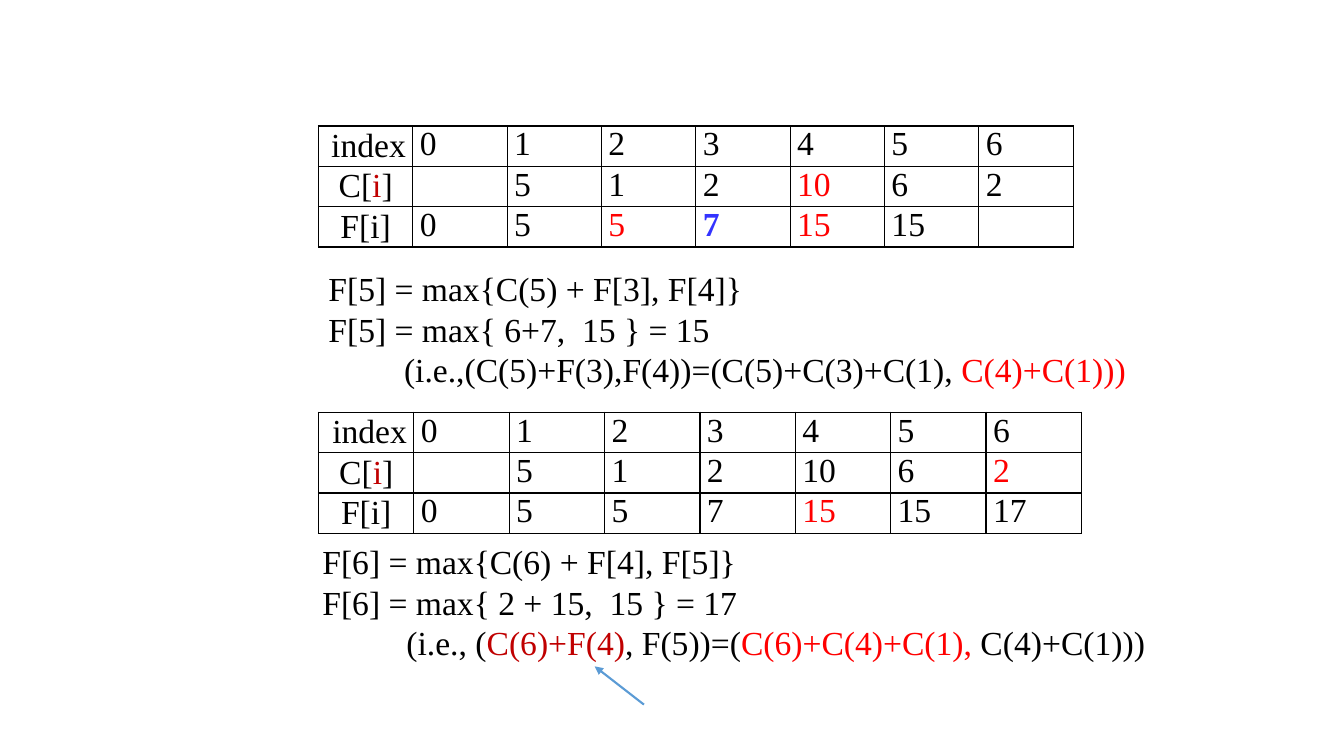
from lxml.etree import SubElement
from pptx import Presentation
from pptx.dml.color import RGBColor
from pptx.enum.shapes import MSO_CONNECTOR
from pptx.enum.text import MSO_ANCHOR as Anchor, PP_ALIGN as Align
from pptx.oxml.ns import qn
from pptx.util import Pt

BLACK = RGBColor(0x00, 0x00, 0x00)
WHITE = RGBColor(0xFF, 0xFF, 0xFF)
RED = RGBColor(0xFF, 0x00, 0x00)
DARK_RED = RGBColor(0xC0, 0x00, 0x00)
BLUE = RGBColor(0x33, 0x33, 0xFF)
ARROW_BLUE = RGBColor(0x5B, 0x9B, 0xD5)


def styled(text, **style):
    """Pair a piece of text with its format: color, bold."""
    return text, style


class SlideBuilder:
    font = "Times New Roman"
    size = Pt(24)
    row_height = Pt(28.8)

    def __init__(self, slide):
        self.slide = slide

    def add_pieces(self, paragraph, *pieces):
        for piece in pieces:
            text, style = styled(piece) if isinstance(piece, str) else piece
            run = paragraph.add_run()
            run.text = text
            run.font.name = self.font
            run.font.size = self.size
            run.font.bold = style.get("bold", False)
            run.font.color.rgb = style.get("color", BLACK)

    def text(self, left, top, width, height, lines):
        """Each line is a left indent in points followed by its pieces."""
        box = self.slide.shapes.add_textbox(Pt(left), Pt(top), Pt(width), Pt(height))
        frame = box.text_frame
        frame.word_wrap = True
        for number, (indent, *pieces) in enumerate(lines):
            paragraph = frame.add_paragraph() if number else frame.paragraphs[0]
            paragraph._p.get_or_add_pPr().set("marL", str(Pt(indent)))
            self.add_pieces(paragraph, *pieces)

    def border(self, cell):
        properties = cell._tc.get_or_add_tcPr()
        for position, side in enumerate(("lnL", "lnR", "lnT", "lnB")):
            line = SubElement(properties, qn(f"a:{side}"), w=str(Pt(1)))
            fill = SubElement(line, qn("a:solidFill"))
            SubElement(fill, qn("a:srgbClr"), val=str(BLACK))
            properties.insert(position, line)

    def table(self, left, top, column_width, rows):
        columns = len(rows[0])
        grid = self.slide.shapes.add_table(
            len(rows), columns, Pt(left), Pt(top),
            Pt(column_width * columns), self.row_height * len(rows)).table
        for column in grid.columns:
            column.width = Pt(column_width)
        for r, row in enumerate(rows):
            grid.rows[r].height = self.row_height
            for c, pieces in enumerate(row):
                cell = grid.cell(r, c)
                cell.fill.solid()
                cell.fill.fore_color.rgb = WHITE
                cell.margin_left = cell.margin_right = Pt(5)
                cell.margin_top = cell.margin_bottom = 0
                paragraph = cell.text_frame.paragraphs[0]
                if c == 0:
                    cell.vertical_anchor = Anchor.MIDDLE
                    paragraph.alignment = Align.CENTER if r else Align.RIGHT
                self.add_pieces(paragraph, *(pieces if isinstance(pieces, list) else [pieces]))
                self.border(cell)

    def arrow(self, start, end):
        connector = self.slide.shapes.add_connector(
            MSO_CONNECTOR.STRAIGHT, *(Pt(value) for value in start + end))
        connector.line.color.rgb = ARROW_BLUE
        connector.line.width = Pt(1.5)
        properties = connector._element.spPr
        SubElement(properties.find(qn("a:ln")), qn("a:tailEnd"), type="triangle")
        SubElement(properties, qn("a:effectLst"))


def main():
    deck = Presentation()
    deck.slide_width, deck.slide_height = Pt(960), Pt(540)
    builder = SlideBuilder(deck.slides.add_slide(deck.slide_layouts[6]))

    index_row = ["index", *"0123456"]
    c_label = ["C[", styled("i", color=DARK_RED), "]"]
    red_15 = styled("15", color=RED)

    # Step 5: table and recurrence
    builder.table(227.5, 90, 67.4, [
        index_row,
        [c_label, [], "5", "1", "2", styled("10", color=RED), "6", "2"],
        ["F[i]", "0", "5", styled("5", color=RED),
         styled("7", color=BLUE, bold=True), red_15, "15", []],
    ])
    builder.text(227.5, 188, 589, 94, [
        (0, "F[5] = max{C(5) + F[3], F[4]}"),
        (0, "F[5] = max{ 6+7,  15 } = 15"),
        (54, "(i.e.,(C(5)+F(3),F(4))=(C(5)+C(3)+C(1), ",
         styled("C(4)+C(1)))", color=RED)),
    ])

    # Step 6: table and recurrence
    builder.table(227.5, 294.5, 68.13, [
        index_row,
        [c_label, [], "5", "1", "2", "10", "6", styled("2", color=RED)],
        ["F[i]", "0", "5", "5", "7", red_15, "15", "17"],
    ])
    builder.text(187.2, 383, 646, 94, [
        (36, "F[6] = max{C(6) + F[4], F[5]}"),
        (36, "F[6] = max{ 2 + 15,  15 } = 17"),
        (96, "(i.e., (", styled("C(6)+F(4)", color=DARK_RED), ", F(5))=(",
         styled("C(6)+C(4)+C(1),", color=RED), " C(4)+C(1)))"),
    ])

    # Pointer to the chosen option
    builder.arrow((460, 503.3), (424.8, 476))

    deck.save("out.pptx")


if __name__ == "__main__":
    main()
